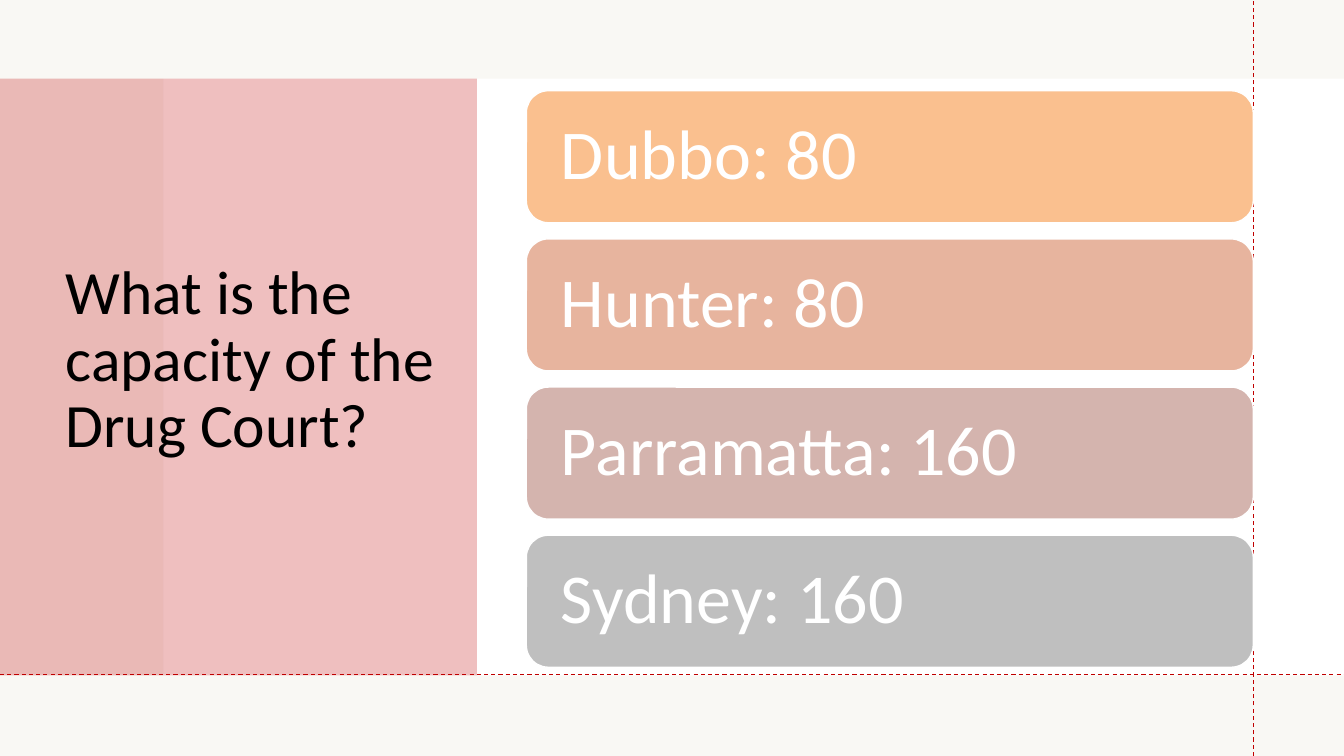
from dataclasses import dataclass

from lxml.etree import SubElement
from pptx import Presentation
from pptx.dml.color import RGBColor
from pptx.enum.dml import MSO_LINE
from pptx.enum.shapes import MSO_CONNECTOR, MSO_SHAPE as Form
from pptx.enum.text import MSO_ANCHOR, MSO_AUTO_SIZE, PP_ALIGN
from pptx.oxml.ns import qn
from pptx.util import Inches, Pt

WHITE, CREAM, RED = "FFFFFF", "EEECE1", "C00000"
WIDE, HIGH = 13.33, 7.5


@dataclass
class Panel:
    left: float
    top: float
    width: float
    height: float
    fill: str
    alpha: int = 100


@dataclass
class Rule:
    x1: float
    y1: float
    x2: float
    y2: float


@dataclass
class Bar:
    text: str
    fill: str


PANELS = [
    Panel(0, 0, WIDE, HIGH, WHITE),
    Panel(0, 0, WIDE, HIGH, CREAM, 35),
    Panel(1.62, 0.78, 11.72, 5.92, WHITE),
    Panel(0, 0.78, 4.73, 5.92, RED, 25),
]
RULES = [Rule(12.43, HIGH, 12.43, 0), Rule(0, 6.69, WIDE, 6.69)]
BARS = [
    Bar("Dubbo: 80", "FAC08F"),
    Bar("Hunter: 80", "E7B49E"),
    Bar("Parramatta: 160", "D4B4AE"),
    Bar("Sydney: 160", "BFBFBF"),
]
BAR_TOP, BAR_STEP = 0.9, 1.47


def paint(part, tone: str) -> None:
    """Give a fill a solid colour."""
    part.solid()
    part.fore_color.rgb = RGBColor.from_string(tone)


def apply(item, values: dict) -> None:
    for name, value in values.items():
        setattr(item, name, value)


def write(shape, text: str, size: int, tone: str, inset: float) -> None:
    """Set one left-aligned, vertically centred paragraph."""
    frame = shape.text_frame
    frame.text = text
    apply(frame, {
        "word_wrap": True,
        "auto_size": MSO_AUTO_SIZE.NONE,
        "vertical_anchor": MSO_ANCHOR.MIDDLE,
        "margin_left": Inches(inset),
        "margin_right": Inches(inset),
    })
    para = frame.paragraphs[0]
    apply(para, {"alignment": PP_ALIGN.LEFT, "line_spacing": 0.9})
    apply(para.font, {"name": "Calibri", "size": Pt(size)})
    paint(para.font.fill, tone)


def add_panel(slide, panel: Panel) -> None:
    box = slide.shapes.add_shape(
        Form.RECTANGLE, Inches(panel.left), Inches(panel.top),
        Inches(panel.width), Inches(panel.height))
    box.shadow.inherit = False
    box.line.fill.background()
    paint(box.fill, panel.fill)
    if panel.alpha < 100:
        tone = box.fill._xPr.find(".//" + qn("a:srgbClr"))
        SubElement(tone, qn("a:alpha"), val=str(panel.alpha * 1000))


def add_rule(slide, rule: Rule) -> None:
    line = slide.shapes.add_connector(
        MSO_CONNECTOR.STRAIGHT, Inches(rule.x1), Inches(rule.y1),
        Inches(rule.x2), Inches(rule.y2))
    paint(line.line.fill, RED)
    apply(line.line, {"width": Pt(0.75), "dash_style": MSO_LINE.DASH})
    SubElement(line._element.spPr, qn("a:effectLst"))


def add_bar(slide, bar: Bar, top: float) -> None:
    box = slide.shapes.add_shape(
        Form.ROUNDED_RECTANGLE, Inches(5.22), Inches(top),
        Inches(7.21), Inches(1.31))
    box.shadow.inherit = False
    paint(box.fill, bar.fill)
    paint(box.line.fill, WHITE)
    box.line.width = Pt(1)
    write(box, bar.text, 50, WHITE, 0.28)


def add_title(slide, text: str) -> None:
    title = slide.shapes.title
    apply(title, {"left": Inches(0.55), "top": Inches(0.74),
                  "width": Inches(3.95), "height": Inches(5.69)})
    write(title, text, 44, "000000", 0.1)
    # Bring the title in front of the panels
    slide.shapes._spTree.append(title._element)


def main() -> None:
    deck = Presentation()
    apply(deck, {"slide_width": Inches(WIDE), "slide_height": Inches(HIGH)})
    slide = deck.slides.add_slide(deck.slide_layouts[5])
    paint(slide.background.fill, "F9F8F4")

    # Backdrop and title
    for panel in PANELS:
        add_panel(slide, panel)
    add_title(slide, "What is the capacity of the Drug Court?")

    # Dashed guides
    for rule in RULES:
        add_rule(slide, rule)

    # Capacity of each court
    for row, bar in enumerate(BARS):
        add_bar(slide, bar, BAR_TOP + row * BAR_STEP)

    deck.save("out.pptx")


if __name__ == "__main__":
    main()
